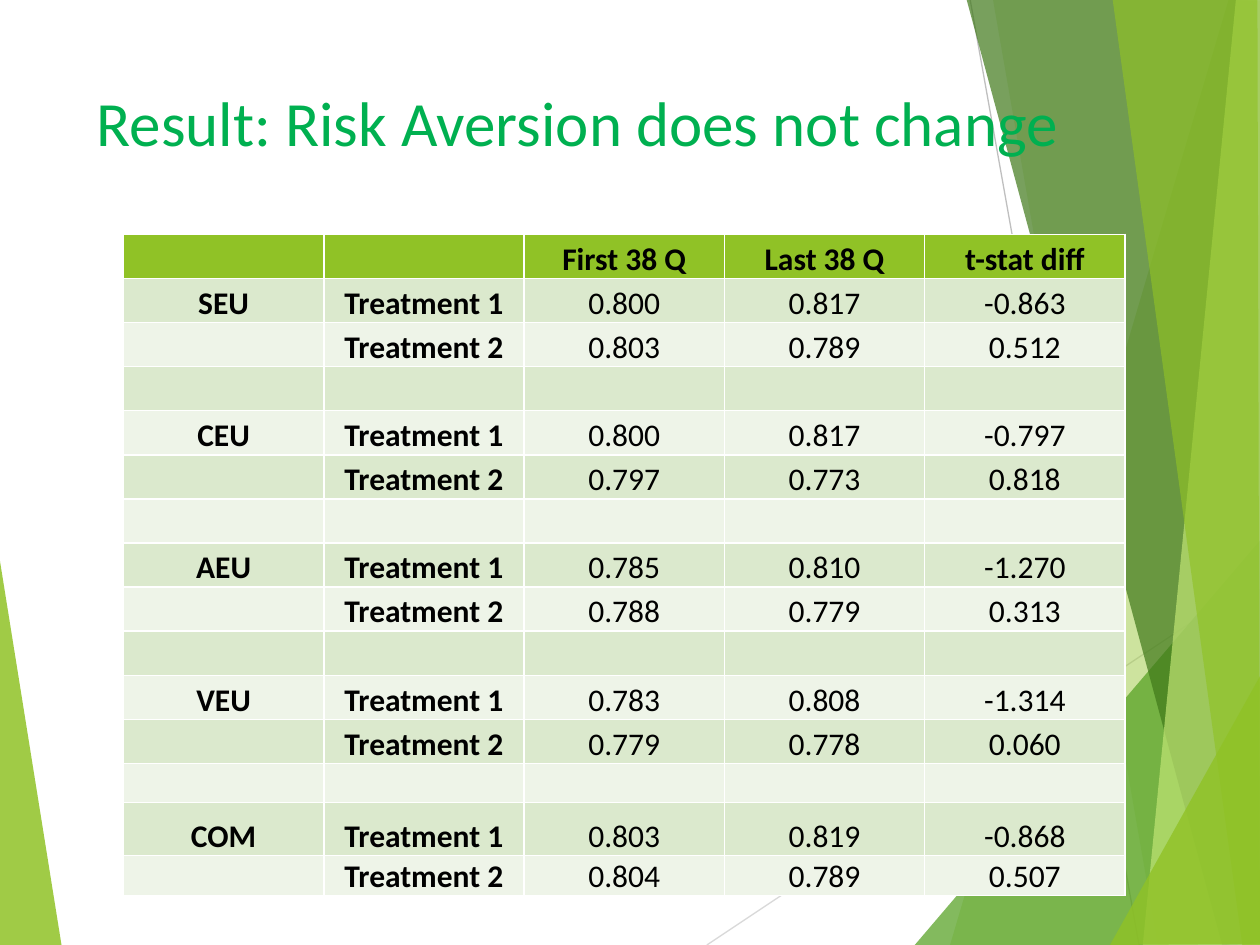
from lxml.etree import SubElement
from pptx import Presentation
from pptx.dml.color import RGBColor
from pptx.enum.shapes import MSO_CONNECTOR
from pptx.enum.text import MSO_ANCHOR, PP_ALIGN
from pptx.oxml.ns import qn
from pptx.util import Inches, Pt

FONT = "Calibri"
LIME = RGBColor(0x90, 0xC2, 0x26)
GREEN = RGBColor(0x54, 0xA0, 0x21)
DARK_GREEN = RGBColor(0x3F, 0x78, 0x19)
PALE_LIME = RGBColor(0xC0, 0xE4, 0x74)
LIGHT_GRAY = RGBColor(0xD9, 0xD9, 0xD9)
GRAY = RGBColor(0xBF, 0xBF, 0xBF)
TITLE_GREEN = RGBColor(0x00, 0xB0, 0x50)
BLACK = RGBColor(0x00, 0x00, 0x00)
BAND_COLORS = (RGBColor(0xDB, 0xE9, 0xCD), RGBColor(0xEE, 0xF4, 0xE8))

TITLE = "Result: Risk Aversion does not change"
HEADER = ("", "", "First 38 Q", "Last 38 Q", "t-stat diff")
RESULTS = {
    "SEU": (("0.800", "0.817", "-0.863"), ("0.803", "0.789", "0.512")),
    "CEU": (("0.800", "0.817", "-0.797"), ("0.797", "0.773", "0.818")),
    "AEU": (("0.785", "0.810", "-1.270"), ("0.788", "0.779", "0.313")),
    "VEU": (("0.783", "0.808", "-1.314"), ("0.779", "0.778", "0.060")),
    "COM": (("0.803", "0.819", "-0.868"), ("0.804", "0.789", "0.507")),
}
ROW_HEIGHTS = [0.35] * 12 + [0.31, 0.42, 0.32]
COLUMN_WIDTH = 1.59

LEFT_FACET = (LIME, 85, ((-0.01, 4.39), (0.49, 7.51), (-0.01, 7.5)))
RIGHT_FACETS = (
    (LIME, 30, ((9.75, 0), (7.54, 7.5), (10.02, 7.51), (10.01, 0.01))),
    (LIME, 20, ((7.88, -0.01), (9.19, 7.5), (10.01, 7.5), (10.01, -0.01))),
    (GREEN, 72, ((7.26, 7.5), (10, 4.29), (10.01, 7.5))),
    (DARK_GREEN, 70, ((7.67, -0.01), (9.7, 7.5), (10.01, 7.49), (10.01, -0.01))),
    (PALE_LIME, 70, ((9.81, -0.01), (9.07, 7.5), (10.01, 7.5), (10, -0.01))),
    (LIME, 65, ((8.83, -0.01), (9.86, 7.5), (10, 7.5), (9.98, -0.01))),
    (LIME, 80, ((8.81, 7.5), (10.01, 5.35), (10.01, 7.49))),
)
RAYS = (
    (LIGHT_GRAY, (5.61, 7.5), (10.01, 4.57)),
    (GRAY, (7.7, 0), (9.04, 7.5)),
)


def add_facet(slide, color, opacity, points):
    corners = [(round(x * 100), round(y * 100)) for x, y in points]
    builder = slide.shapes.build_freeform(*corners[0], scale=Inches(0.01))
    builder.add_line_segments(corners[1:], close=True)
    shape = builder.convert_to_shape()
    shape.shadow.inherit = False
    shape.line.fill.background()
    shape.fill.solid()
    shape.fill.fore_color.rgb = color
    color_element = shape.fill._xPr.find(qn("a:solidFill"))[0]
    SubElement(color_element, qn("a:alpha"), val=str(opacity * 1000))


def add_ray(slide, color, start, end):
    ends = [Inches(length) for length in start + end]
    connector = slide.shapes.add_connector(MSO_CONNECTOR.STRAIGHT, *ends)
    connector.line.color.rgb = color
    connector.line.width = Pt(0.75)
    SubElement(connector._element.spPr, qn("a:effectLst"))


def style_paragraph(paragraph, size, color, bold=False):
    paragraph.font.name = FONT
    paragraph.font.size = Pt(size)
    paragraph.font.color.rgb = color
    paragraph.font.bold = bold


def table_rows():
    rows = [HEADER]
    for model, (first, second) in RESULTS.items():
        if len(rows) > 1:
            rows.append(("",) * len(HEADER))
        rows.append((model, "Treatment 1") + first)
        rows.append(("", "Treatment 2") + second)
    return rows


def add_results_table(slide):
    rows = table_rows()
    table = slide.shapes.add_table(
        len(rows), len(HEADER), Inches(0.98), Inches(1.86),
        Inches(COLUMN_WIDTH * len(HEADER)), Inches(sum(ROW_HEIGHTS)),
    ).table
    for column in table.columns:
        column.width = Inches(COLUMN_WIDTH)
    for row_index, texts in enumerate(rows):
        table.rows[row_index].height = Inches(ROW_HEIGHTS[row_index])
        fill_color = BAND_COLORS[(row_index - 1) % 2] if row_index else LIME
        for column_index, text in enumerate(texts):
            cell = table.cell(row_index, column_index)
            cell.text = text
            cell.fill.solid()
            cell.fill.fore_color.rgb = fill_color
            cell.vertical_anchor = MSO_ANCHOR.BOTTOM
            cell.margin_left = cell.margin_right = cell.margin_top = Inches(0.01)
            cell.margin_bottom = 0
            paragraph = cell.text_frame.paragraphs[0]
            paragraph.alignment = PP_ALIGN.CENTER
            is_label = row_index == 0 or column_index < 2
            style_paragraph(paragraph, 18 if text else 12, BLACK, is_label)


def add_title(slide):
    title = slide.shapes.add_textbox(Inches(0.67), Inches(0.62), Inches(9.06), Inches(0.69))
    frame = title.text_frame
    frame.word_wrap = True
    frame.vertical_anchor = MSO_ANCHOR.MIDDLE
    frame.text = TITLE
    style_paragraph(frame.paragraphs[0], 36, TITLE_GREEN)


def main():
    presentation = Presentation()
    presentation.slide_width = Inches(10)
    presentation.slide_height = Inches(7.5)
    slide = presentation.slides.add_slide(presentation.slide_layouts[6])
    add_facet(slide, *LEFT_FACET)
    for ray in RAYS:
        add_ray(slide, *ray)
    for facet in RIGHT_FACETS:
        add_facet(slide, *facet)
    add_results_table(slide)
    add_title(slide)
    presentation.save("out.pptx")


if __name__ == "__main__":
    main()
